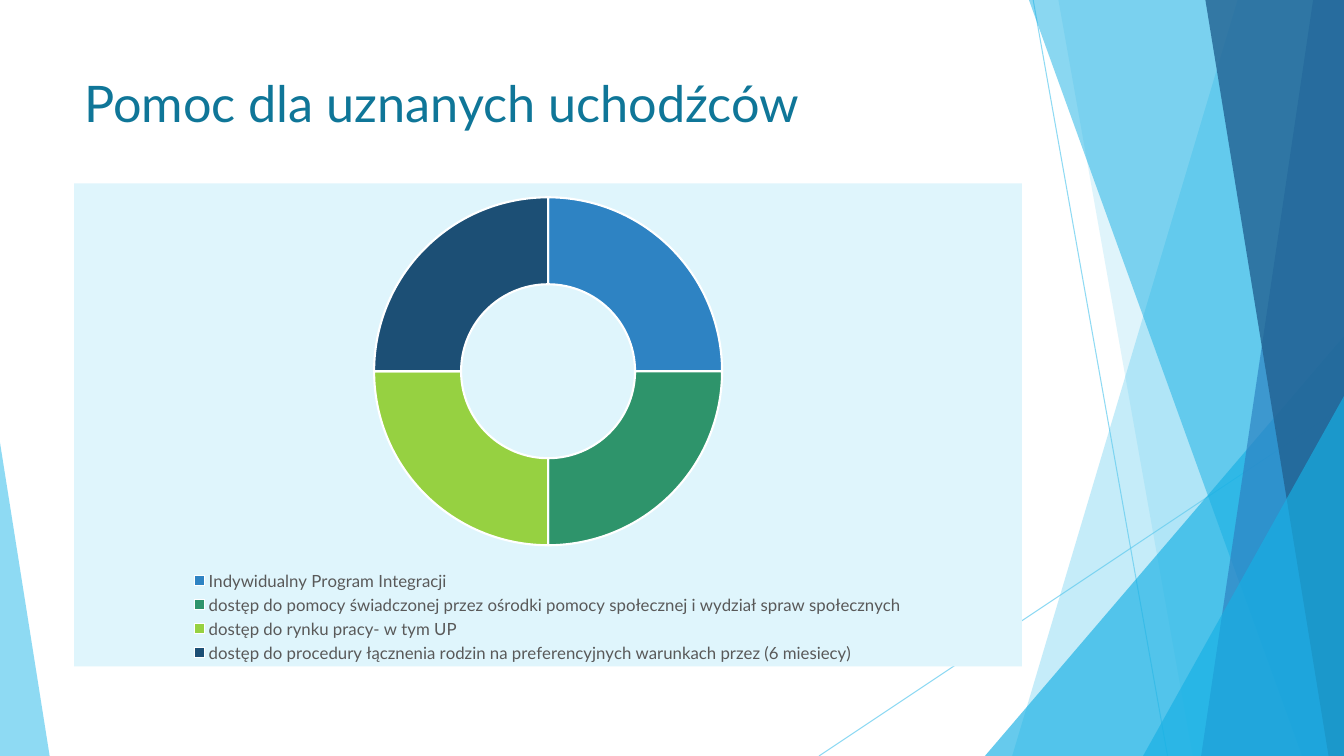
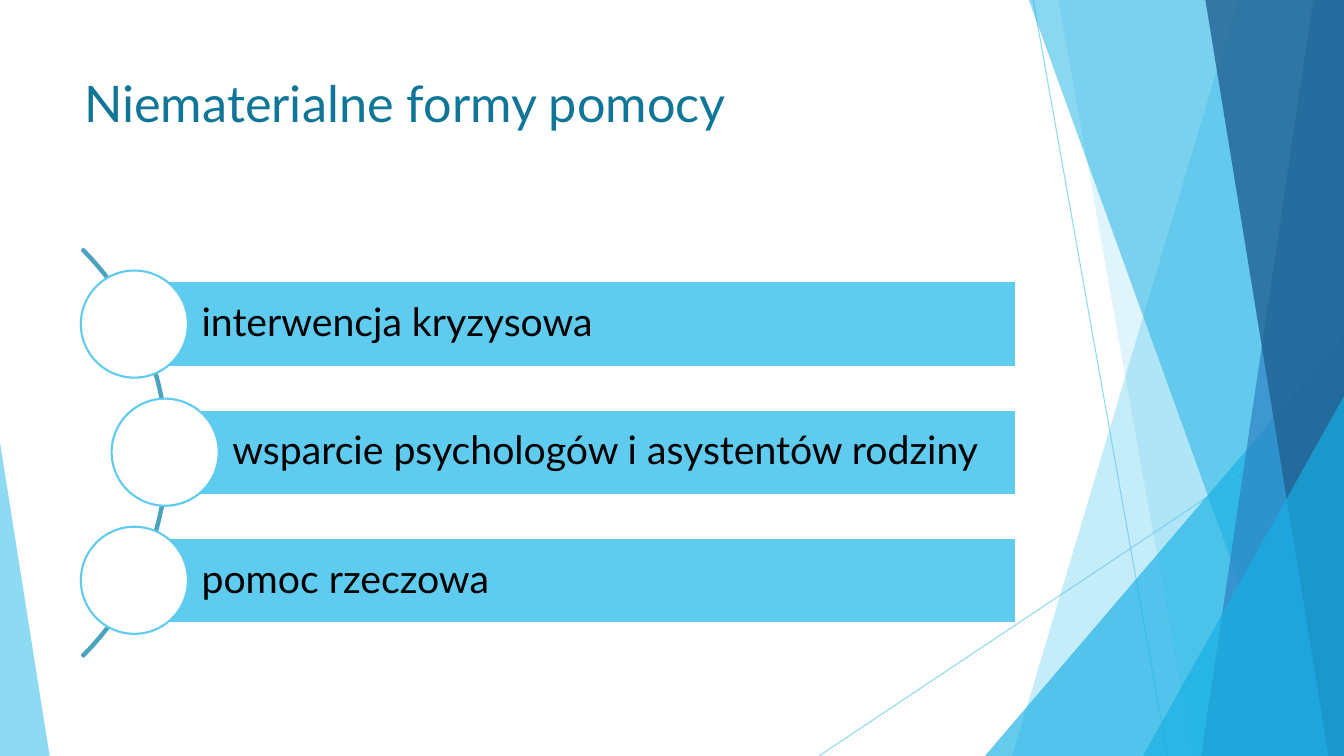
from lxml import etree
from pptx import Presentation
from pptx.chart.data import CategoryChartData
from pptx.dml.color import RGBColor
from pptx.enum.chart import XL_CHART_TYPE, XL_LEGEND_POSITION
from pptx.enum.shapes import MSO_CONNECTOR, MSO_SHAPE
from pptx.enum.text import MSO_ANCHOR, PP_ALIGN
from pptx.oxml import parse_xml
from pptx.oxml.ns import nsdecls, qn
from pptx.util import Pt

RECT, OVAL = MSO_SHAPE.RECTANGLE, MSO_SHAPE.OVAL
WEDGE, ARC = MSO_SHAPE.ISOSCELES_TRIANGLE, MSO_SHAPE.BLOCK_ARC
LINE, RING = MSO_CONNECTOR.STRAIGHT, XL_CHART_TYPE.DOUGHNUT
LEFT, TOP, MIDDLE = PP_ALIGN.LEFT, MSO_ANCHOR.TOP, MSO_ANCHOR.MIDDLE
BOTTOM = XL_LEGEND_POSITION.BOTTOM

WHITE = RGBColor(0xFF, 0xFF, 0xFF)
BLACK = RGBColor(0x00, 0x00, 0x00)
GREY = RGBColor(0x59, 0x59, 0x59)
TEAL = RGBColor(0x0F, 0x76, 0x98)
STEEL = RGBColor(0x4C, 0xA3, 0xBF)
SKY = RGBColor(0x5F, 0xCB, 0xEF)
CYAN = RGBColor(0x17, 0xB0, 0xE4)
BLUE = RGBColor(0x2E, 0x83, 0xC3)
DEEP = RGBColor(0x22, 0x62, 0x92)
NAVY = RGBColor(0x1C, 0x4F, 0x75)
GREEN = RGBColor(0x2E, 0x94, 0x6B)
LIME = RGBColor(0x96, 0xD1, 0x41)
PALE = RGBColor(0xDF, 0xF5, 0xFC)

WIDE, HIGH = 960, 540
FACE = "Lato"
TITLE = {"name": FACE, "size": Pt(36)}
BODY = {"name": FACE, "size": Pt(28)}
SMALL = {"name": FACE, "size": Pt(10)}
KEY = {"name": FACE, "size": Pt(12)}
HEAD = {"word_wrap": True, "vertical_anchor": TOP}
LABEL = {"word_wrap": True, "vertical_anchor": MIDDLE,
         "margin_left": Pt(48), "margin_right": Pt(6),
         "margin_top": Pt(6), "margin_bottom": Pt(6)}

RAYS = [(738, 0, 834, HIGH), (WIDE, 290, 585, HIGH)]
BACK = [(884, 723, SKY, 36), (756, 852, SKY, 20)]
FRONT = [(735, 930, CYAN, 50), (938, 858, BLUE, 70), (861, 949, DEEP, 80)]

PARTS = [
    ("Indywidualny Program Integracji", 25, BLUE),
    ("dostęp do pomocy świadczonej przez ośrodki pomocy społecznej"
     " i wydział spraw społecznych", 25, GREEN),
    ("dostęp do rynku pracy- w tym UP", 25, LIME),
    ("dostęp do procedury łącznenia rodzin na preferencyjnych"
     " warunkach przez (6 miesiecy)", 25, NAVY),
]
FORMS = [(96, "interwencja kryzysowa"),
         (118, "wsparcie psychologów i asystentów rodziny"),
         (96, "pomoc rzeczowa")]


def style(item, look):
    """Set each attribute named in a dict."""
    for name, value in look.items():
        setattr(item, name, value)


def fade(item, share):
    """Make the first plain colour of an item partly opaque."""
    tint = item.element.find(".//" + qn("a:srgbClr"))
    etree.SubElement(tint, qn("a:alpha")).set("val", str(share * 1000))


def paint(shape, fill=None, edge=None):
    """Give a shape its fill and outline, with no shadow."""
    shape.shadow.inherit = False
    if fill is None:
        shape.fill.background()
    else:
        shape.fill.solid()
        shape.fill.fore_color.rgb = fill
    if edge is None:
        shape.line.fill.background()
    else:
        shape.line.color.rgb = edge
        shape.line.width = Pt(1.5)


def place(slide, kind, box, fill=None, edge=None):
    """Add a painted preset shape."""
    shape = slide.shapes.add_shape(kind, *map(Pt, box))
    paint(shape, fill, edge)
    return shape


def write(shape, text, frame, font, tint):
    """Put one left-aligned line of text in a shape."""
    style(shape.text_frame, frame)
    para = shape.text_frame.paragraphs[0]
    para.alignment = LEFT
    run = para.add_run()
    run.text = text
    style(run.font, font)
    run.font.color.rgb = tint
    return para


def ray(slide, ends):
    """Draw a thin faded line."""
    line = slide.shapes.add_connector(LINE, *map(Pt, ends))
    line.line.color.rgb = SKY
    line.line.width = Pt(0.75)
    fade(line, 70)
    etree.SubElement(line.element.spPr, qn("a:effectLst"))


def band(slide, top, base, tint, share):
    """Draw a slanted band that runs to the right edge."""
    pen = slide.shapes.build_freeform(Pt(top), 0)
    rest = [(WIDE, 0), (WIDE, HIGH), (base, HIGH)]
    pen.add_line_segments([(Pt(x), Pt(y)) for x, y in rest])
    shape = pen.convert_to_shape()
    paint(shape, tint)
    fade(shape, share)


def wedge(slide, left, top, width, peak, tint, share):
    """Draw a triangle that stands on the bottom edge."""
    shape = place(slide, WEDGE, (left, top, width, HIGH - top), tint)
    shape.adjustments[0] = peak
    fade(shape, share)


def start(deck, title):
    """Add a slide with the shared backdrop and a title."""
    slide = deck.slides.add_slide(deck.slide_layouts[6])
    for ends in RAYS:
        ray(slide, ends)
    for spec_row in BACK:
        band(slide, *spec_row)
    wedge(slide, 703.5, 240, 256.5, 1, CYAN, 66)
    for spec_row in FRONT:
        band(slide, *spec_row)
    wedge(slide, 816.5, 283, 143.5, 1, CYAN, 66)
    wedge(slide, 0, 316, 35.5, 0, SKY, 70)
    box = slide.shapes.add_textbox(Pt(53), Pt(48), Pt(677), Pt(70))
    write(box, title, HEAD, TITLE, TEAL)
    return slide


def ring(slide, parts, box):
    """Add a doughnut chart with a legend on a pale ground."""
    names, values, tints = zip(*parts)
    data = CategoryChartData()
    data.categories = names
    data.add_series("Series 1", values)
    chart = slide.shapes.add_chart(RING, *map(Pt, box), data).chart
    chart.has_title = False
    style(chart.font, SMALL)
    chart.font.color.rgb = BLACK
    chart.has_legend = True
    style(chart.legend, {"position": BOTTOM, "include_in_layout": False})
    style(chart.legend.font, KEY)
    chart.legend.font.color.rgb = GREY
    plot = chart.plots[0]
    plot.vary_by_categories = True
    for spot, tint in enumerate(tints):
        part = plot.series[0].points[spot].format
        part.fill.solid()
        part.fill.fore_color.rgb = tint
        part.line.color.rgb = WHITE
        part.line.width = Pt(1.5)
    root = chart.element
    root.find(".//" + qn("c:holeSize")).set("val", "75")
    ground = parse_xml(
        f'<c:spPr {nsdecls("c", "a")}><a:solidFill><a:srgbClr val="{PALE}"/>'
        '</a:solidFill><a:ln><a:noFill/></a:ln></c:spPr>')
    root.find(qn("c:txPr")).addprevious(ground)


def curve(slide):
    """Draw the arc that links the list."""
    arc = place(slide, ARC, (-292, 117.5, 412, 412), edge=STEEL)
    for spot, value in enumerate((189, 27, 0.004)):
        arc.adjustments[spot] = value


def entry(slide, left, top, text):
    """Draw a labelled bar with a circle centred on its left end."""
    right, tall, disc = 726, 61, 76.5
    bar = place(slide, RECT, (left, top, right - left, tall), SKY, WHITE)
    write(bar, text, LABEL, BODY, BLACK).line_spacing = 0.9
    spot = (left - disc / 2, top + (tall - disc) / 2, disc, disc)
    place(slide, OVAL, spot, WHITE, SKY)


def main():
    """Build and save both slides."""
    deck = Presentation()
    style(deck, {"slide_width": Pt(WIDE), "slide_height": Pt(HIGH)})
    slide = start(deck, "Pomoc dla uznanych uchodźców")
    ring(slide, PARTS, (53, 131, 677, 345))
    slide = start(deck, "Niematerialne formy pomocy")
    curve(slide)
    for step, (left, text) in enumerate(FORMS):
        entry(slide, left, 201 + 91.5 * step, text)
    deck.save("out.pptx")


if __name__ == "__main__":
    main()
